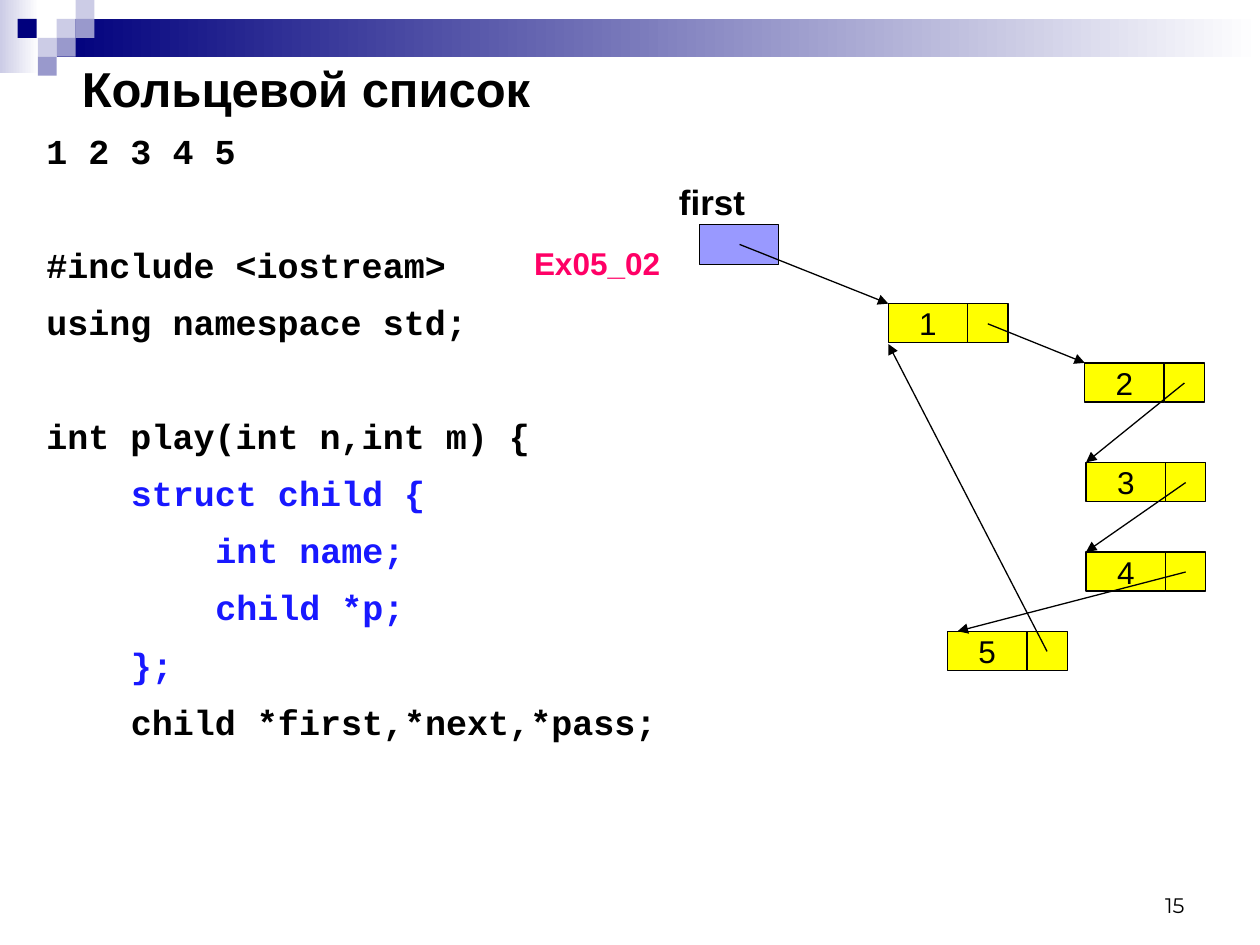
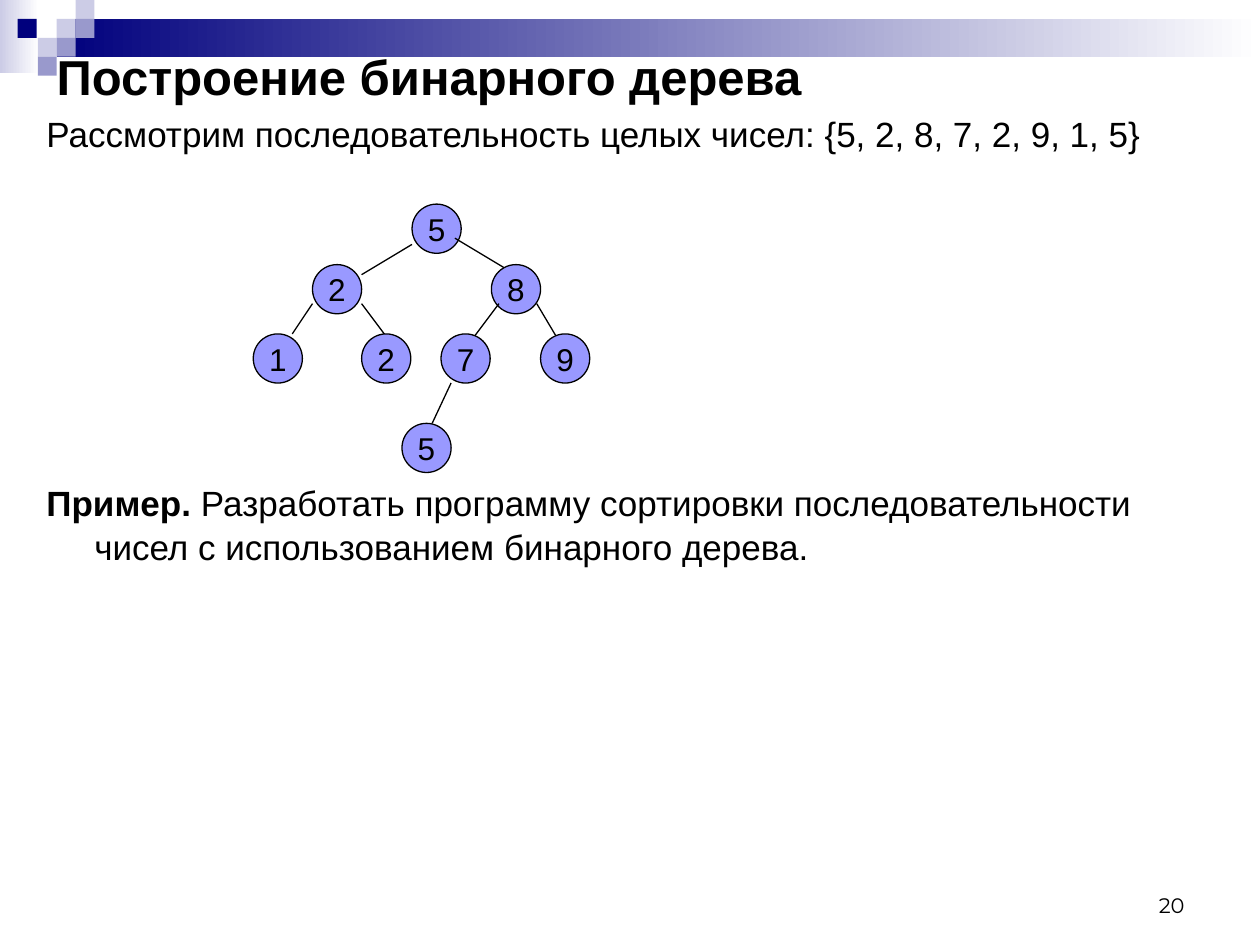
from pptx import Presentation
from pptx.dml.color import RGBColor
from pptx.enum.shapes import MSO_CONNECTOR, MSO_SHAPE
from pptx.enum.text import MSO_ANCHOR, MSO_AUTO_SIZE, PP_ALIGN
from pptx.oxml.ns import qn
from pptx.util import Inches, Pt
from lxml import etree

RECT, OVAL = MSO_SHAPE.RECTANGLE, MSO_SHAPE.OVAL
STRAIGHT = MSO_CONNECTOR.STRAIGHT
TOP, MIDDLE, BOTTOM = MSO_ANCHOR.TOP, MSO_ANCHOR.MIDDLE, MSO_ANCHOR.BOTTOM
LEFT, CENTER, RIGHT = PP_ALIGN.LEFT, PP_ALIGN.CENTER, PP_ALIGN.RIGHT
NO_AUTOFIT = MSO_AUTO_SIZE.NONE
TITLE_ONLY = 5

BLACK, WHITE = "000000", "FFFFFF"
NAVY, LILAC, MAUVE = "00007D", "CCCCE6", "9999CC"
PERIWINKLE, YELLOW = "9999FF", "FFFF00"
BLUE, PINK = "1818FF", "FF0066"
SANS, MONO, NUMBER_FONT = "Arial", "Courier New", "Montserrat"

BODY = (0.27, 0.91, 9.45, 6.3)
SQUARE = 0.15
CORNER_SQUARES = [
    (0.45, 0.15, LILAC), (0.6, 0, LILAC), (0.6, 0.15, MAUVE), (0.3, 0.3, LILAC),
    (0.14, 0.15, NAVY), (0.45, 0.3, MAUVE), (0.3, 0.45, MAUVE),
]


def rgb(value):
    return RGBColor.from_string(value)


def add_text(p, text, size=20, font=SANS, color=BLACK, bold=False):
    r = p.add_run()
    r.text = text
    r.font.size = Pt(size)
    r.font.name = font
    r.font.bold = bold
    r.font.color.rgb = rgb(color)


def format_paragraph(p, spacing, before, left=0, first=0):
    """Set line spacing, space before in points, and indents in inches."""
    p.line_spacing = spacing
    p.space_before = Pt(before)
    pPr = p._p.get_or_add_pPr()
    pPr.set("marL", str(Inches(left)))
    pPr.set("indent", str(Inches(first)))


class Deck:
    def __init__(self):
        self.prs = Presentation()
        self.prs.slide_width = Inches(10)
        self.prs.slide_height = Inches(7.5)
        self.slide = None

    def new_slide(self, title, left, top, number):
        self.slide = self.prs.slides.add_slide(self.prs.slide_layouts[TITLE_ONLY])
        self.corner_band()
        sp = self.slide.shapes.title
        sp.left, sp.top, sp.width, sp.height = map(Inches, (left, top, 9.45, 0.48))
        tf = sp.text_frame
        tf.auto_size = NO_AUTOFIT
        tf.vertical_anchor = MIDDLE
        p = tf.paragraphs[0]
        p.alignment = LEFT
        add_text(p, title, size=28, bold=True)
        self.label(str(number), (7.17, 6.83, 2.33, 0.5), anchor=BOTTOM, align=RIGHT,
                   size=12, font=NUMBER_FONT)

    def corner_band(self):
        self.gradient((0, 0, 0.31, 0.58), LILAC)
        self.gradient((0.45, 0.15, 9.55, 0.3), NAVY)
        for x, y, color in CORNER_SQUARES:
            self.shape(RECT, (x, y, SQUARE, SQUARE), color, outlined=False)

    def shape(self, kind, box, fill, text="", outlined=True):
        sp = self.slide.shapes.add_shape(kind, *map(Inches, box))
        sp.shadow.inherit = False
        sp.fill.solid()
        sp.fill.fore_color.rgb = rgb(fill)
        if outlined:
            sp.line.color.rgb = rgb(BLACK)
            sp.line.width = Pt(0.75)
        else:
            sp.line.fill.background()
        if text:
            tf = sp.text_frame
            tf.word_wrap = False
            tf.vertical_anchor = MIDDLE
            p = tf.paragraphs[0]
            p.alignment = CENTER
            add_text(p, text, size=18)
        return sp

    def gradient(self, box, color):
        """Add a band that fades from the colour to white, left to right."""
        fill = self.shape(RECT, box, color, outlined=False).fill
        fill.gradient()
        fill.gradient_angle = 0
        for stop, position, shade in zip(fill.gradient_stops, (0, 1), (color, WHITE)):
            stop.position = position
            stop.color.rgb = rgb(shade)

    def line(self, start, end, arrow=False):
        cx = self.slide.shapes.add_connector(STRAIGHT, *map(Inches, (*start, *end)))
        cx.line.color.rgb = rgb(BLACK)
        cx.line.width = Pt(0.75)
        if arrow:
            tail = etree.SubElement(cx.line._get_or_add_ln(), qn("a:tailEnd"))
            tail.set("type", "triangle")
        etree.SubElement(cx._element.spPr, qn("a:effectLst"))

    def text_frame(self, box, anchor=TOP):
        tf = self.slide.shapes.add_textbox(*map(Inches, box)).text_frame
        tf.word_wrap = True
        tf.vertical_anchor = anchor
        return tf

    def label(self, text, box, anchor=TOP, align=LEFT, **fmt):
        p = self.text_frame(box, anchor).paragraphs[0]
        p.alignment = align
        add_text(p, text, **fmt)

    def code(self, box, lines):
        """Write (level, space before, colour, text) lines of code."""
        tf = self.text_frame(box)
        for i, (level, before, color, text) in enumerate(lines):
            p = tf.add_paragraph() if i else tf.paragraphs[0]
            format_paragraph(p, 1.2, before, left=level * 0.67)
            add_text(p, text, font=MONO, color=color, bold=True)


def ring_list_slide(deck):
    deck.new_slide("Кольцевой список", 0.55, 0.46, 15)
    near, far = 3.8, 36.5
    deck.code(BODY, [
        (0, 6, BLACK, "1 2 3 4 5"),
        (0, far, BLACK, "#include <iostream>"),
        (0, near, BLACK, "using namespace std;"),
        (0, far, BLACK, "int play(int n,int m) {"),
        (1, near, BLUE, "struct child {"),
        (2, near, BLUE, "int name;"),
        (2, near, BLUE, "child *p;"),
        (1, near, BLUE, "};"),
        (1, near, BLACK, "child *first,*next,*pass;"),
    ])

    name_w, link_w, cell_h = 0.63, 0.32, 0.31
    nodes = [(7.05, 2.41), (8.61, 2.88), (8.62, 3.67), (8.62, 4.38), (7.52, 5.01)]
    targets = nodes[1:4] + [(7.6, 5.01), (7.05, 2.73)]
    deck.shape(RECT, (5.55, 1.78, name_w, 0.32), PERIWINKLE)
    for number, (x, y) in enumerate(nodes, 1):
        deck.shape(RECT, (x, y, name_w, cell_h), YELLOW, str(number))
        deck.shape(RECT, (x + name_w, y, link_w, cell_h), YELLOW)
    deck.line((5.87, 1.94), nodes[0], arrow=True)
    for (x, y), target in zip(nodes, targets):
        deck.line((x + name_w + link_w / 2, y + 0.16), target, arrow=True)

    deck.label("first", (5.29, 1.38, 0.9, 0.43), bold=True)
    deck.label("Ex05_02", (4.14, 1.89, 1.26, 0.4), size=18, color=PINK, bold=True)


def binary_tree_slide(deck):
    deck.new_slide("Построение бинарного дерева", 0.35, 0.36, 20)
    tf = deck.text_frame(BODY)
    p = tf.paragraphs[0]
    format_paragraph(p, 0.8, 5, left=0.38, first=-0.38)
    add_text(p, "Рассмотрим последовательность целых чисел: {5, 2, 8, 7, 2, 9, 1, 5}")
    p = tf.add_paragraph()
    format_paragraph(p, 1.05, 185.5, left=0.38, first=-0.38)
    add_text(p, "Пример.", bold=True)
    add_text(p, " Разработать программу сортировки последовательности "
                "чисел с использованием бинарного дерева.")

    diameter = 0.39
    # Each level: top, nodes as (left, value), branches down to the next level.
    levels = [
        (1.62, [(3.27, "5")],
         [((3.27, 1.94), (2.87, 2.18)), ((3.61, 1.89), (4.01, 2.13))]),
        (2.1, [(2.48, "2"), (3.9, "8")],
         [((2.48, 2.41), (2.32, 2.65)), ((2.87, 2.41), (3.11, 2.73)),
          ((3.96, 2.41), (3.72, 2.73)), ((4.26, 2.41), (4.45, 2.73))]),
        (2.65, [(2.01, "1"), (2.87, "2"), (3.5, "7"), (4.29, "9")],
         [((3.58, 3.04), (3.43, 3.36))]),
        (3.36, [(3.19, "5")], []),
    ]
    for y, nodes, branches in levels:
        for x, value in nodes:
            deck.shape(OVAL, (x, y, diameter, diameter), PERIWINKLE, value)
        for start, end in branches:
            deck.line(start, end)


def main():
    deck = Deck()
    ring_list_slide(deck)
    binary_tree_slide(deck)
    deck.prs.save("out.pptx")


if __name__ == "__main__":
    main()
